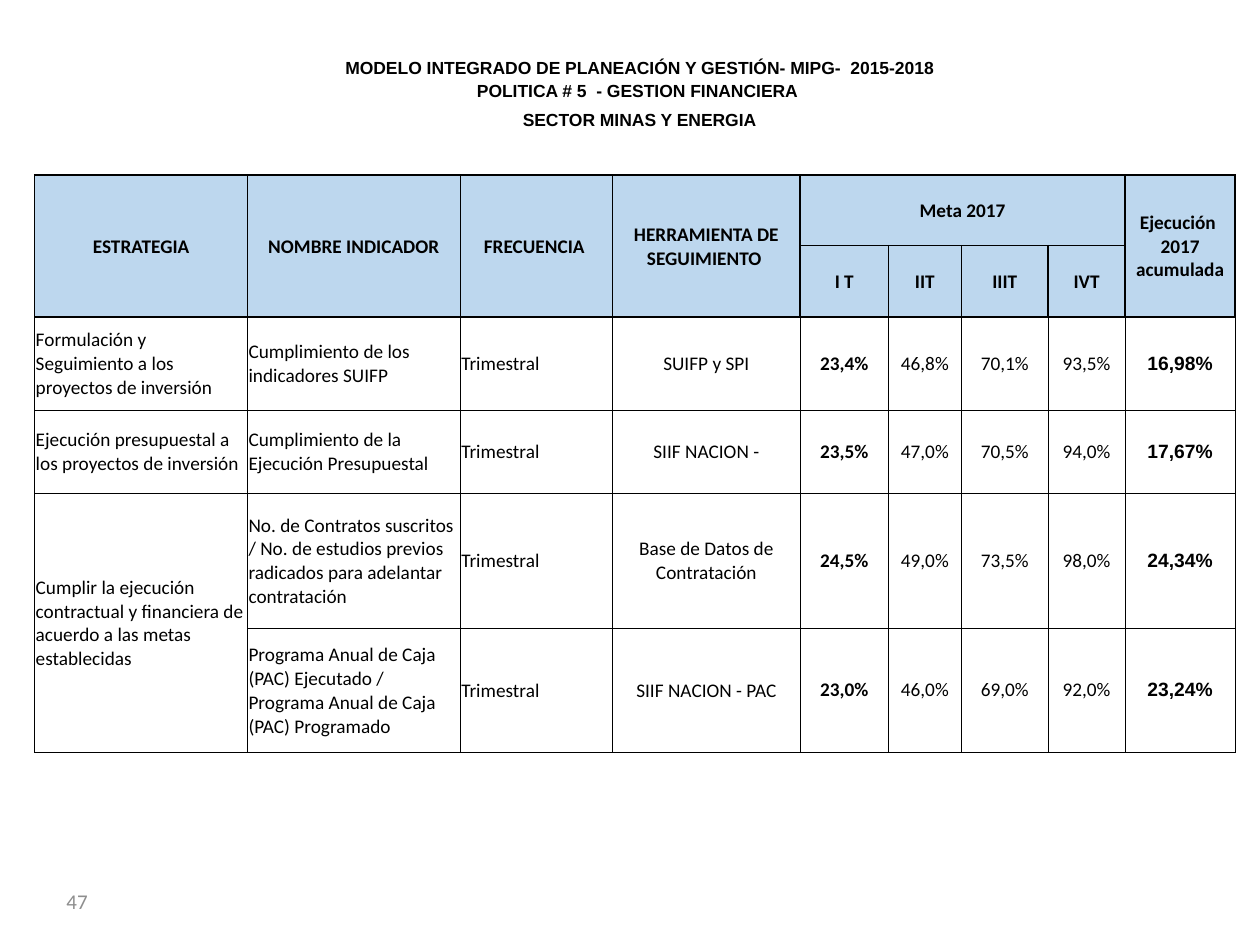
from lxml import etree
from pptx import Presentation
from pptx import util as u
from pptx.dml.color import RGBColor
from pptx.enum import text
from pptx.oxml.ns import qn

BLACK = RGBColor(0x00, 0x00, 0x00)
GREY = RGBColor(0x8E, 0x8E, 0x8E)
HEADER_BLUE = RGBColor(0xBD, 0xD7, 0xEE)

TITLES = [
    "MODELO INTEGRADO DE PLANEACIÓN Y GESTIÓN- MIPG-  2015-2018",
    "POLITICA # 5  - GESTION FINANCIERA ",
    "SECTOR MINAS Y ENERGIA",
]
TITLE_HEIGHTS = [0.46, 0.46, 0.58]

COLUMN_WIDTHS = [4.29, 4.29, 3.07, 3.78, 1.78, 1.47, 1.75, 1.55, 2.22]
ROW_HEIGHTS = [1.42, 1.44, 1.88, 1.67, 2.72, 2.51]
HEADER_ROWS = 2
TEXT_COLUMNS = 3
FIRST_TARGET, RESULT = 4, 8
MERGES = [((0, column), (1, column)) for column in (0, 1, 2, 3, RESULT)]
MERGES += [((0, 4), (0, 7)), ((4, 0), (5, 0))]
INDICATORS = [
    ["ESTRATEGIA", "NOMBRE INDICADOR", "FRECUENCIA ", "HERRAMIENTA DE SEGUIMIENTO ",
     "Meta 2017", "", "", "", "Ejecución  2017 acumulada"],
    ["", "", "", "", "I T", "IIT", "IIIT", "IVT", ""],
    ["Formulación y Seguimiento a los proyectos de inversión",
     "Cumplimiento de los indicadores SUIFP", "Trimestral", "SUIFP y SPI",
     "23,4%", "46,8%", "70,1%", "93,5%", "16,98%"],
    ["Ejecución presupuestal a los proyectos de inversión",
     "Cumplimiento de la Ejecución Presupuestal", "Trimestral", "SIIF NACION -",
     "23,5%", "47,0%", "70,5%", "94,0%", "17,67%"],
    ["Cumplir la ejecución contractual y financiera de acuerdo a las metas establecidas",
     "No. de Contratos suscritos  / No. de estudios previos radicados para adelantar contratación",
     "Trimestral", "Base de Datos de Contratación",
     "24,5%", "49,0%", "73,5%", "98,0%", "24,34%"],
    ["", "Programa Anual de Caja (PAC) Ejecutado / Programa Anual de Caja (PAC) Programado",
     "Trimestral", "SIIF NACION - PAC",
     "23,0%", "46,0%", "69,0%", "92,0%", "23,24%"],
]


def write(para, wording, size=11, font="Calibri", color=BLACK, bold=False, centered=False):
    """Add one formatted span of text to a paragraph."""
    para.alignment = text.PP_ALIGN.CENTER if centered else text.PP_ALIGN.LEFT
    span = para.add_run()
    span.text = wording
    span.font.size = u.Pt(size)
    span.font.name = font
    span.font.bold = bold
    span.font.color.rgb = color


def dress_cell(cell, margin=0, anchor=text.MSO_ANCHOR.MIDDLE, fill=None, line=0, top=None):
    """Set the margins, anchor, borders and fill of a cell."""
    cell.margin_left = cell.margin_right = cell.margin_top = u.Cm(margin)
    cell.margin_bottom = 0
    cell.vertical_anchor = anchor
    properties = cell._tc.get_or_add_tcPr()
    widths = {"L": line, "R": line, "T": line if top is None else top, "B": line}
    for side, width in widths.items():
        border = etree.SubElement(properties, qn(f"a:ln{side}"), w=str(u.Pt(width)))
        if width:
            paint = etree.SubElement(border, qn("a:solidFill"))
            etree.SubElement(paint, qn("a:srgbClr"), val=str(BLACK))
        else:
            etree.SubElement(border, qn("a:noFill"))
    if fill is None:
        cell.fill.background()
    else:
        cell.fill.solid()
        cell.fill.fore_color.rgb = fill


def add_grid(page, box, widths, heights):
    """Add an unstyled table whose columns and rows share out the box."""
    left, top, width, height = box
    frame = page.shapes.add_table(len(heights), len(widths), *map(u.Cm, box))
    table = frame.table
    table.first_row = table.horz_banding = False
    for column, share in zip(table.columns, widths):
        column.width = u.Cm(width * share / sum(widths))
    for row, share in zip(table.rows, heights):
        row.height = u.Cm(height * share / sum(heights))
    return table


def add_titles(page, box):
    """Place the three centred title lines in a borderless table."""
    table = add_grid(page, box, [1], TITLE_HEIGHTS)
    for row, wording in enumerate(TITLES):
        cell = table.cell(row, 0)
        dress_cell(cell, anchor=text.MSO_ANCHOR.BOTTOM)
        write(cell.text_frame.paragraphs[0], wording, size=10, font="Arial",
              bold=True, centered=True)


def add_indicators(page, box):
    """Place the table of strategies, indicators, targets and results."""
    table = add_grid(page, box, COLUMN_WIDTHS, ROW_HEIGHTS)
    for start, end in MERGES:
        table.cell(*start).merge(table.cell(*end))
    for row, wordings in enumerate(INDICATORS):
        header = row < HEADER_ROWS
        for column, wording in enumerate(wordings):
            cell = table.cell(row, column)
            dress_cell(cell,
                       margin=0.02 if header or column < FIRST_TARGET else 0,
                       fill=HEADER_BLUE if header else None,
                       line=1 if header else 0.5,
                       top=1 if row == HEADER_ROWS else None)
            if wording:
                write(cell.text_frame.paragraphs[0], wording,
                      font="Arial" if column == RESULT and not header else "Calibri",
                      bold=header or column in (FIRST_TARGET, RESULT),
                      centered=header or column >= TEXT_COLUMNS)


def add_page_number(page, box, number):
    """Place the page number."""
    frame = page.shapes.add_textbox(*map(u.Cm, box)).text_frame
    frame.word_wrap = True
    frame.vertical_anchor = text.MSO_ANCHOR.MIDDLE
    write(frame.paragraphs[0], number, size=12, color=GREY)


def main():
    """Build the slide and save the deck."""
    deck = Presentation()
    deck.slide_width, deck.slide_height = u.Cm(25.4), u.Cm(19.05)
    page = deck.slides.add_slide(deck.slide_layouts[6])
    add_page_number(page, (1.09, 17.65, 5.92, 1.02), "47")
    add_indicators(page, (0.7, 3.53, 24.2, 11.64))
    add_titles(page, (0.89, 1.12, 24, 1.5))
    deck.save("out.pptx")


if __name__ == "__main__":
    main()
